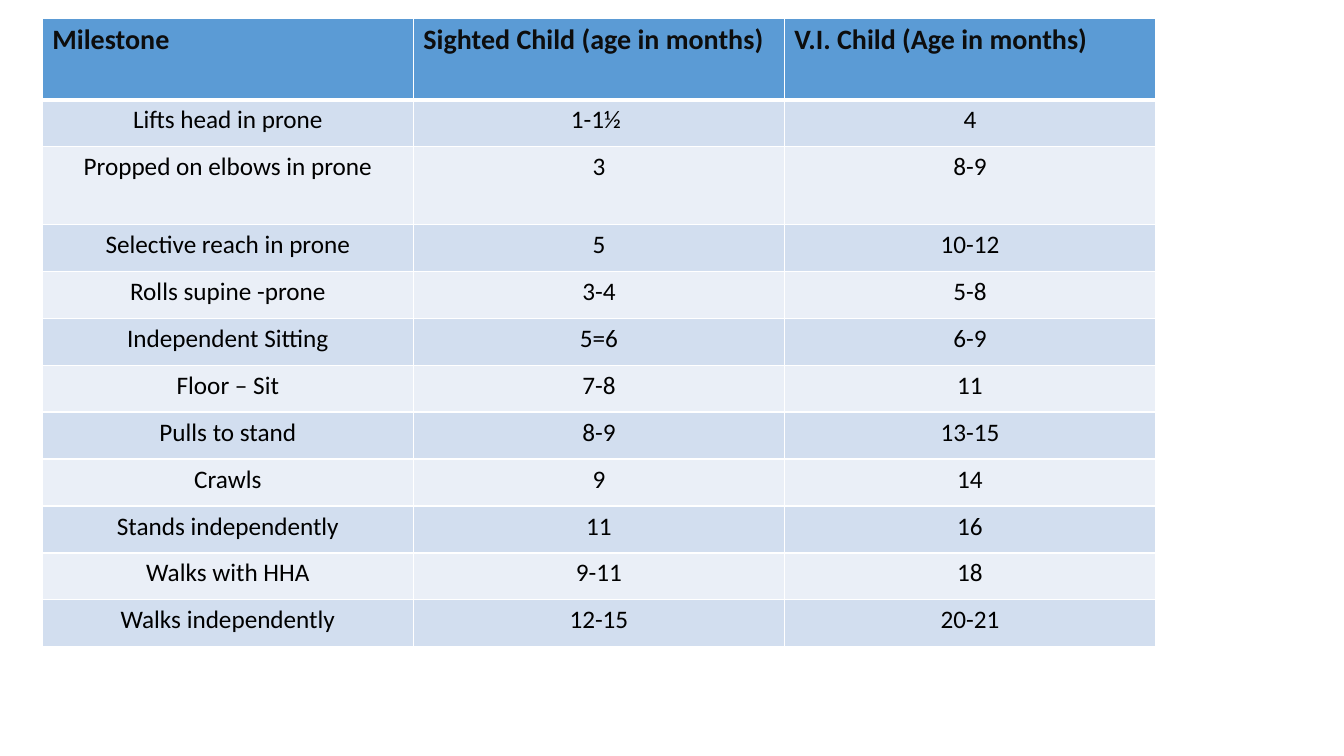
import pptx
import pptx.util
import pptx.dml.color
import pptx.enum.text
import pptx.oxml
import pptx.oxml.ns

HEADINGS = ("Milestone", "Sighted Child (age in months)", "V.I. Child (Age in months)")
MILESTONES = [
    ("Lifts head in prone", "1-1½ ", "4"),
    ("Propped on elbows in prone", "3", "8-9"),
    ("Selective reach in prone", "5", "10-12"),
    ("Rolls supine -prone", "3-4", "5-8"),
    ("Independent Sitting", "5=6", "6-9"),
    ("Floor – Sit", "7-8", "11"),
    ("Pulls to stand", "8-9", "13-15"),
    ("Crawls", "9", "14"),
    ("Stands independently", "11", "16"),
    ("Walks with HHA", "9-11", "18"),
    ("Walks independently", "12-15", "20-21"),
]
HEADER_FILL, BAND_FILLS = "5B9BD5", ("D2DEEF", "EAEFF7")
HEADER_INK, BODY_INK, RULE = "0D0D0D", "000000", "FFFFFF"

LEFT, TOP, WIDTH, HEIGHT = 0.42, 0.18, 11.04, 6.24
TALL_ROWS = {0: 0.81, 2: 0.77}


def color(code):
    return pptx.dml.color.RGBColor.from_string(code)


def add_borders(cell, widths):
    """Draw the cell's edges; widths maps L, R, T, B to points."""
    properties = cell._tc.get_or_add_tcPr()
    for side, points in widths.items():
        properties.append(pptx.oxml.parse_xml(
            f'<a:ln{side} {pptx.oxml.ns.nsdecls("a")} w="{pptx.util.Pt(points)}">'
            f'<a:solidFill><a:srgbClr val="{RULE}"/></a:solidFill></a:ln{side}>'))


def format_cell(cell, text, row):
    is_header = row == 0
    add_borders(cell, {"L": 1, "R": 1, "T": 3 if row == 1 else 1, "B": 3 if is_header else 1})
    cell.fill.solid()
    cell.fill.fore_color.rgb = color(HEADER_FILL if is_header else BAND_FILLS[(row - 1) % 2])
    cell.text_frame.text = text
    para = cell.text_frame.paragraphs[0]
    align = pptx.enum.text.PP_ALIGN
    para.alignment = align.LEFT if is_header else align.CENTER
    font = para.runs[0].font
    font.name = "Calibri"
    font.size = pptx.util.Pt(20 if is_header else 18)
    font.bold = is_header
    font.color.rgb = color(HEADER_INK if is_header else BODY_INK)


def main():
    deck = pptx.Presentation()
    deck.slide_width = pptx.util.Inches(13.33)
    deck.slide_height = pptx.util.Inches(7.5)
    page = deck.slides.add_slide(deck.slide_layouts[6])

    rows = [HEADINGS, *MILESTONES]
    place = [pptx.util.Inches(length) for length in (LEFT, TOP, WIDTH, HEIGHT)]
    table = page.shapes.add_table(len(rows), len(HEADINGS), *place).table
    plain_height = (HEIGHT - sum(TALL_ROWS.values())) / (len(rows) - len(TALL_ROWS))

    for column in table.columns:
        column.width = pptx.util.Inches(WIDTH / len(HEADINGS))
    for row, texts in enumerate(rows):
        table.rows[row].height = pptx.util.Inches(TALL_ROWS.get(row, plain_height))
        for column, text in enumerate(texts):
            format_cell(table.cell(row, column), text, row)

    deck.save("out.pptx")


if __name__ == "__main__":
    main()
